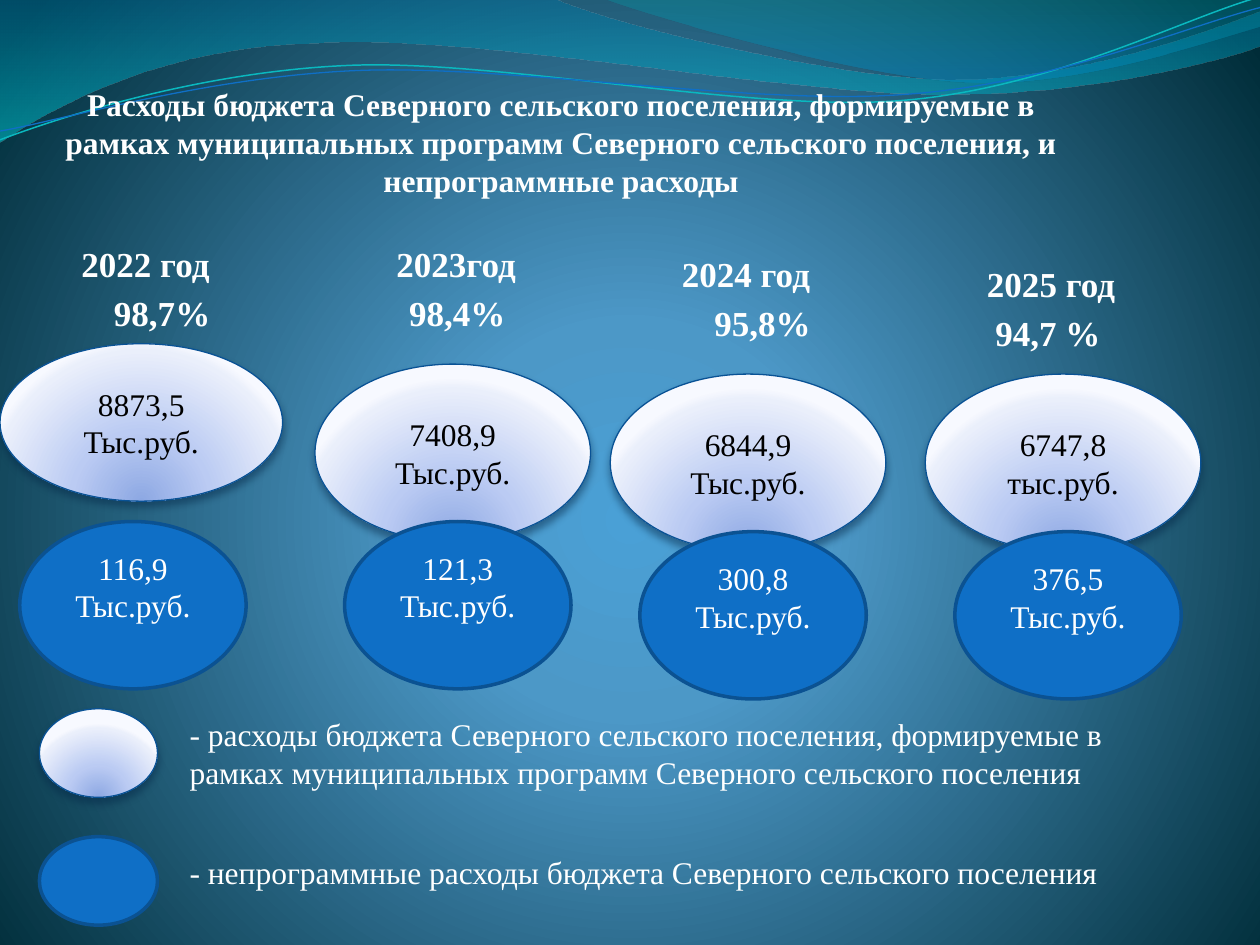
from lxml import etree
from pptx import Presentation
from pptx import util as u
from pptx.dml.color import RGBColor
from pptx.enum import shapes, text
from pptx.oxml import ns

FONT = "Times New Roman"
COLORS = {
    "white": "FFFFFF", "black": "000000", "blue": "0F6FC6", "blue_edge": "0B5292",
    "light_edge": "095295", "teal_line": "0AB8BF", "shadow": "042747",
}
# Gradient stops: position %, colour, opacity %
BACKGROUND = [(0, "4AA0D6", 100), (25, "4C98C7", 100), (100, "002C38", 100)]
PEARL = [(0, "8DA8E3", 100), (43, "BBCBF3", 100), (93, "EAEFFB", 100), (100, "F7F9FF", 100)]
WIDE_WAVE = [(0, "0074A1", 45), (100, "00C6CF", 55)]
RIGHT_WAVE = [(0, "00A1A9", 30), (80, "008BBF", 45)]

# Wave outlines in points: two numbers are a line end, six are a Bezier curve
WIDE_OUTLINE = [
    (0, 0), (316.8, -0.7), (342.7, 12.2, 478.1, 45.4, 545.8, 45.4),
    (614.2, 45.4, 689.8, 18.7, 720, 6.5), (720.7, 25.9),
    (707.8, 31.7, 626.4, 54.7, 537.1, 54), (447.8, 54, 275, 20.2, 185, 24.5),
    (92.9, 25.9, 33.1, 59.8, -0.7, 81.4), (0, 0)]
RIGHT_OUTLINE = [
    (344.9, -0.7), (366.5, 7.9, 491, 44.6, 553.7, 46.8),
    (616.3, 49.7, 691.9, 23, 720, 15.1), (720, 0), (344.9, -0.7)]
TEAL_CURVE = [
    (0, 79.9), (34.6, 67, 113.8, 41, 199.4, 37.4),
    (284.4, 33.8, 427, 64.1, 513.4, 57.6), (599.8, 51.1, 675.4, 10.8, 718.6, -1.4)]
BLUE_CURVE = [
    (0, 74.9), (33.8, 69.1, 118.1, 43.9, 203.8, 40.3),
    (290.2, 36.7, 429.8, 60.5, 516.2, 54), (601.9, 48.2, 677.5, 15.1, 720, 4.3)]

# Year, share, programme and other spending, then where each item stands
YEARS = [
    dict(year="2022 год", year_at=(39.4, 135), share="98,7%", share_at=(39.4, 163.1),
         program="8873,5\nТыс.руб.", program_box=(0, 196.4, 161.5, 90),
         other="116,9", other_at=(11.25, 298)),
    dict(year="2023год", year_at=(219.4, 135), share="98,4%", share_at=(208, 163.1),
         program="7408,9\nТыс.руб.", program_box=(180, 208.1, 157.5, 101.3),
         other="121,3", other_at=(196.9, 298)),
    dict(year="2024 год", year_at=(382.5, 140.5), share="95,8%", share_at=(382.5, 168.8),
         program="6844,9\nТыс.руб.", program_box=(348.75, 213.8, 157.5, 101.3),
         other="300,8", other_at=(365.6, 303.8)),
    dict(year="2025 год", year_at=(556.9, 146.3), share="94,7 %", share_at=(545.6, 174.4),
         program="6747,8\nтыс.руб.", program_box=(528.75, 213.8, 157.5, 101.3),
         other="376,5", other_at=(545.6, 303.8)),
]
LEGEND = [
    ("- расходы бюджета Северного сельского поселения, формируемые в рамках "
     "муниципальных программ Северного сельского поселения", 405, 405),
    ("- непрограммные расходы бюджета Северного сельского поселения", 478.1, 483.8),
]


def rgb(name):
    return RGBColor.from_string(COLORS[name])


def add_color(parent, value, opacity):
    color = etree.SubElement(parent, ns.qn("a:srgbClr"), val=value)
    if opacity < 100:
        etree.SubElement(color, ns.qn("a:alpha"), val=str(opacity * 1000))


def set_gradient(fill, properties, stops, focus=None):
    """Radial gradient around focus (l, t, r, b in %), or vertical without it."""
    fill.solid()
    gradient = etree.Element(ns.qn("a:gradFill"), rotWithShape="1")
    stop_list = etree.SubElement(gradient, ns.qn("a:gsLst"))
    for position, value, opacity in stops:
        stop = etree.SubElement(stop_list, ns.qn("a:gs"), pos=str(position * 1000))
        add_color(stop, value, opacity)
    if focus:
        circle = etree.SubElement(gradient, ns.qn("a:path"))
        circle.set("path", "circle")
        etree.SubElement(circle, ns.qn("a:fillToRect"),
                         {side: str(value * 1000) for side, value in zip("ltrb", focus)})
    else:
        etree.SubElement(gradient, ns.qn("a:lin"), ang="5400000", scaled="0")
    properties.replace(properties.find(ns.qn("a:solidFill")), gradient)


def add_shadow(shape):
    effects = shape.element.spPr.find(ns.qn("a:effectLst"))
    shadow = etree.SubElement(effects, ns.qn("a:outerShdw"), blurRad=str(u.Pt(4.5)),
                              dist=str(u.Pt(3)), dir="5400000", rotWithShape="0")
    add_color(shadow, COLORS["shadow"], 48)


def write_text(shape, content, size=18, color="white", bold=False, align="LEFT",
               anchor="TOP", bottom=3.6):
    frame = shape.text_frame
    frame.word_wrap = True
    frame.auto_size = text.MSO_AUTO_SIZE.NONE
    frame.vertical_anchor = getattr(text.MSO_ANCHOR, anchor)
    frame.margin_bottom = u.Pt(bottom)
    frame.text = content
    for paragraph in frame.paragraphs:
        paragraph.alignment = getattr(text.PP_ALIGN, align)
        for run in paragraph.runs:
            run.font.name, run.font.size, run.font.bold = FONT, u.Pt(size), bold
            run.font.color.rgb = rgb(color)


def add_label(slide, content, left, top, width, height, **text_format):
    box = slide.shapes.add_textbox(u.Pt(left), u.Pt(top), u.Pt(width), u.Pt(height))
    write_text(box, content, **text_format)


def add_oval(slide, box, pearl, content=None):
    oval = slide.shapes.add_shape(shapes.MSO_SHAPE.OVAL, *map(u.Pt, box))
    oval.shadow.inherit = False
    if pearl:
        set_gradient(oval.fill, oval.element.spPr, PEARL, (50, 130, 50, -30))
        add_shadow(oval)
    else:
        oval.fill.solid()
        oval.fill.fore_color.rgb = rgb("blue")
    oval.line.color.rgb = rgb("light_edge" if pearl else "blue_edge")
    oval.line.width = u.Pt(0.75 if pearl else 2)
    if content:
        write_text(oval, content, color="black" if pearl else "white", align="CENTER",
                   anchor="MIDDLE", bottom=3.6 if pearl else 25)


def bend(wave, outline):
    """Join the three line ends of each six-number segment into one curve."""
    lines = wave.element.spPr.iter(ns.qn("a:lnTo"))
    remaining = iter(list(lines))
    for segment in outline[1:]:
        first = next(remaining)
        if len(segment) == 6:
            curve = etree.Element(ns.qn("a:cubicBezTo"))
            first.addprevious(curve)
            for line in (first, next(remaining), next(remaining)):
                curve.append(line[0])
                line.getparent().remove(line)


def add_wave(slide, outline, stops=None, color=None, width=0.75):
    points = [(u.Pt(segment[i]), u.Pt(segment[i + 1]))
              for segment in outline for i in range(0, len(segment), 2)]
    builder = slide.shapes.build_freeform(*points[0])
    builder.add_line_segments(points[1:], close=stops is not None)
    wave = builder.convert_to_shape()
    bend(wave, outline)
    wave.shadow.inherit = False
    if stops:
        set_gradient(wave.fill, wave.element.spPr, stops)
        wave.line.fill.background()
    else:
        wave.fill.background()
        wave.line.color.rgb = rgb(color)
        wave.line.width = u.Pt(width)


def add_title(slide, content):
    title = slide.shapes.title
    title.element.getparent().append(title.element)  # in front of the waves
    title.left, title.top, title.width, title.height = map(u.Pt, (11.25, 45, 618.75, 72.7))
    write_text(title, content, bold=True, align="CENTER")


def main():
    presentation = Presentation()
    presentation.slide_width, presentation.slide_height = u.Pt(720), u.Pt(540)
    slide = presentation.slides.add_slide(presentation.slide_layouts[5])

    # Background and waves
    background = slide.background.fill
    background.solid()
    set_gradient(background, slide.element.find(".//" + ns.qn("p:bgPr")), BACKGROUND,
                 (10, 110, 10, 100))
    add_wave(slide, WIDE_OUTLINE, WIDE_WAVE)
    add_wave(slide, RIGHT_OUTLINE, RIGHT_WAVE)
    add_wave(slide, TEAL_CURVE, color="teal_line", width=0.85)
    add_wave(slide, BLUE_CURVE, color="blue")

    add_title(slide, "Расходы бюджета Северного сельского поселения, формируемые в рамках "
                     "муниципальных программ Северного сельского поселения, и "
                     "непрограммные расходы")

    # One column per year
    for item in YEARS:
        add_label(slide, item["year"], *item["year_at"], 106.5, 31.5, size=20, bold=True)
        add_label(slide, item["share"], *item["share_at"], 106.5, 31.5, size=20, bold=True,
                  align="CENTER")
        add_oval(slide, item["program_box"], True, item["program"])
        add_oval(slide, (*item["other_at"], 129.4, 95.6), False, item["other"] + "\nТыс.руб.")

    # Legend
    for (content, oval_top, text_top), pearl in zip(LEGEND, (True, False)):
        add_oval(slide, (22.5, oval_top, 67.5, 50.6), pearl)
        add_label(slide, content, 101.25, text_top, 585, 50.6 if pearl else 29)

    presentation.save("out.pptx")


if __name__ == "__main__":
    main()
